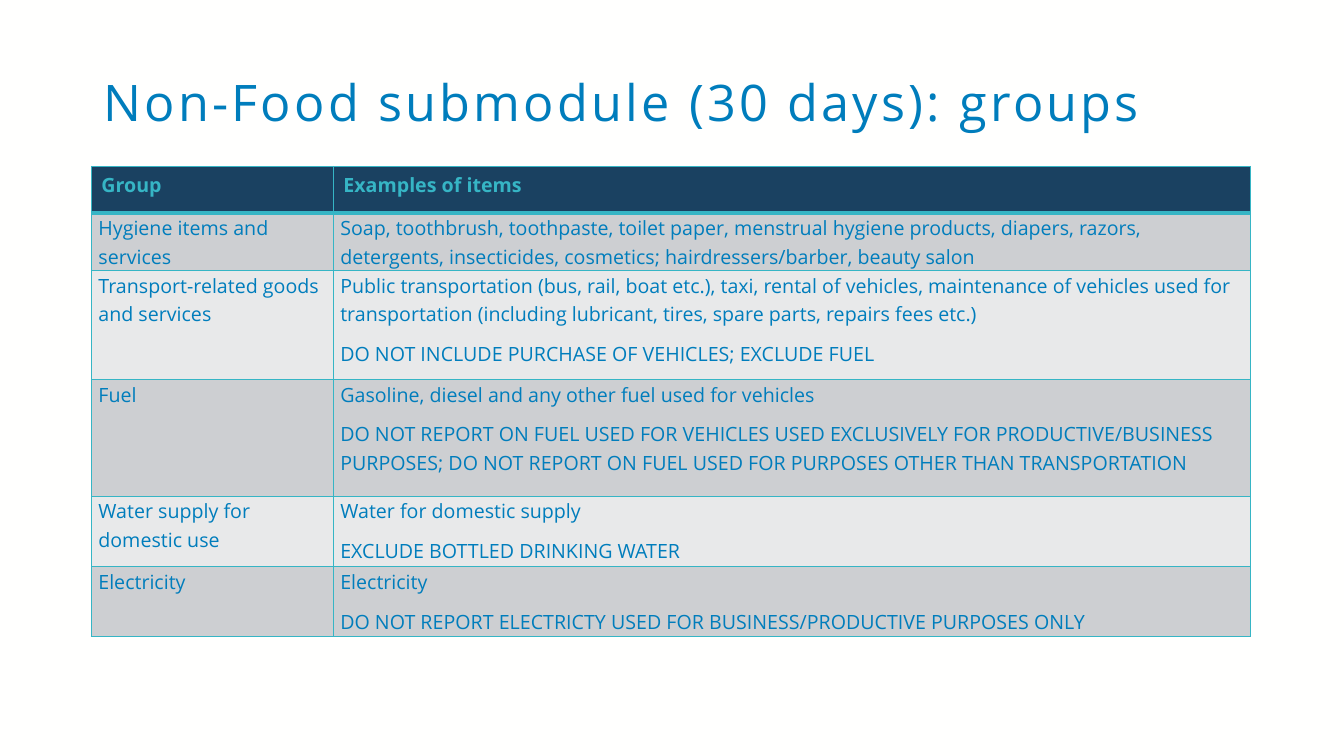
import pptx
import pptx.dml.color
import pptx.enum.text
import pptx.oxml
import pptx.oxml.ns
import pptx.util

RGBColor = pptx.dml.color.RGBColor
PAPER = RGBColor(0xFF, 0xFF, 0xFE)
BLUE = RGBColor(0x00, 0x7D, 0xBC)
TEAL = RGBColor(0x36, 0xB5, 0xC5)
NAVY = RGBColor(0x1A, 0x41, 0x61)
BANDS = (RGBColor(0xCD, 0xCF, 0xD2), RGBColor(0xE8, 0xE9, 0xEA))

HEADINGS = ("Group", "Examples of items")
# Each group: its name, then the paragraphs of examples
GROUPS = [
    ("Hygiene items and services",
     ["Soap, toothbrush, toothpaste, toilet paper, menstrual hygiene products, diapers, razors, "
      "detergents, insecticides, cosmetics; hairdressers/barber, beauty salon"]),
    ("Transport-related goods and services",
     ["Public transportation (bus, rail, boat etc.), taxi, rental of vehicles, maintenance of "
      "vehicles used for transportation (including lubricant, tires, spare parts, repairs fees etc.)",
      "DO NOT INCLUDE PURCHASE OF VEHICLES; EXCLUDE FUEL"]),
    ("Fuel",
     ["Gasoline, diesel and any other fuel used for vehicles",
      "DO NOT REPORT ON FUEL USED FOR VEHICLES USED EXCLUSIVELY FOR PRODUCTIVE/BUSINESS PURPOSES; "
      "DO NOT REPORT ON FUEL USED FOR PURPOSES OTHER THAN TRANSPORTATION"]),
    ("Water supply for domestic use",
     ["Water for domestic supply", "EXCLUDE BOTTLED DRINKING WATER"]),
    ("Electricity",
     ["Electricity", "DO NOT REPORT ELECTRICTY USED FOR BUSINESS/PRODUCTIVE PURPOSES ONLY"]),
]


class Deck:
    """Holds the style and the current slide; lengths are percentages of the slide's size."""

    font = "Open Sans"
    title_size = pptx.util.Pt(36)
    body_size = pptx.util.Pt(14)

    def __init__(self):
        self.prs = pptx.Presentation()
        self.prs.slide_width = pptx.util.Inches(13.33)
        self.prs.slide_height = pptx.util.Inches(7.5)
        self.slide = self.prs.slides.add_slide(self.prs.slide_layouts[6])
        background = self.slide.background.fill
        background.solid()
        background.fore_color.rgb = PAPER

    def x(self, share):
        return round(self.prs.slide_width * share / 100)

    def y(self, share):
        return round(self.prs.slide_height * share / 100)

    def style(self, paragraph, size, color, bold=False):
        paragraph.font.name = self.font
        paragraph.font.size = size
        paragraph.font.bold = bold
        paragraph.font.color.rgb = color

    def title(self, text, left, top, width, height):
        box = self.slide.shapes.add_textbox(self.x(left), self.y(top), self.x(width), self.y(height))
        box.text_frame.word_wrap = True
        heading = box.text_frame.paragraphs[0]
        run = heading.add_run()
        run.text = text
        run._r.get_or_add_rPr().set("spc", "230")
        heading.line_spacing = 0.9
        self.style(heading, self.title_size, BLUE)

    def border(self, cell, side, points):
        line = pptx.oxml.parse_xml(
            f'<a:ln{side} {pptx.oxml.ns.nsdecls("a")} w="{pptx.util.Pt(points)}">'
            f'<a:solidFill><a:srgbClr val="{TEAL}"/></a:solidFill></a:ln{side}>')
        cell._tc.get_or_add_tcPr().append(line)

    def cell(self, cell, paragraphs, fill, thick_side, is_header):
        for side in "LRTB":
            self.border(cell, side, 3 if side == thick_side else 1)
        cell.fill.solid()
        cell.fill.fore_color.rgb = fill
        if not is_header:
            cell.margin_left = cell.margin_right = pptx.util.Inches(0.07)
            cell.margin_top = cell.margin_bottom = 0
        cell.text_frame.text = "\n".join(paragraphs)
        for paragraph in cell.text_frame.paragraphs:
            if not is_header:
                paragraph.line_spacing = 1.07
                paragraph.space_after = pptx.util.Pt(8)
            self.style(paragraph, self.body_size, TEAL if is_header else BLUE, is_header)

    def table(self, headings, groups, left, top, widths, heights):
        table = self.slide.shapes.add_table(
            len(heights), len(widths), self.x(left), self.y(top),
            self.x(sum(widths)), self.y(sum(heights))).table
        for column, width in zip(table.columns, widths):
            column.width = self.x(width)
        for row, height in zip(table.rows, heights):
            row.height = self.y(height)
        # Header row, with a heavy rule below it
        for cell, heading in zip(table.rows[0].cells, headings):
            self.cell(cell, [heading], NAVY, "B", True)
        # Group rows in alternating bands
        for index, (name, examples) in enumerate(groups):
            rule = "T" if index == 0 else None
            for column, paragraphs in enumerate(([name], examples)):
                self.cell(table.cell(index + 1, column), paragraphs, BANDS[index % 2], rule, False)


def main():
    deck = Deck()
    deck.title("Non-Food submodule (30 days): groups", 6.95, 9.65, 86.5, 16.8)
    deck.table(HEADINGS, GROUPS, 6.8, 22.03, widths=(18, 68.27),
               heights=(6.13, 7.6, 14.4, 15.47, 9.33, 9.2))
    deck.prs.save("out.pptx")


if __name__ == "__main__":
    main()
